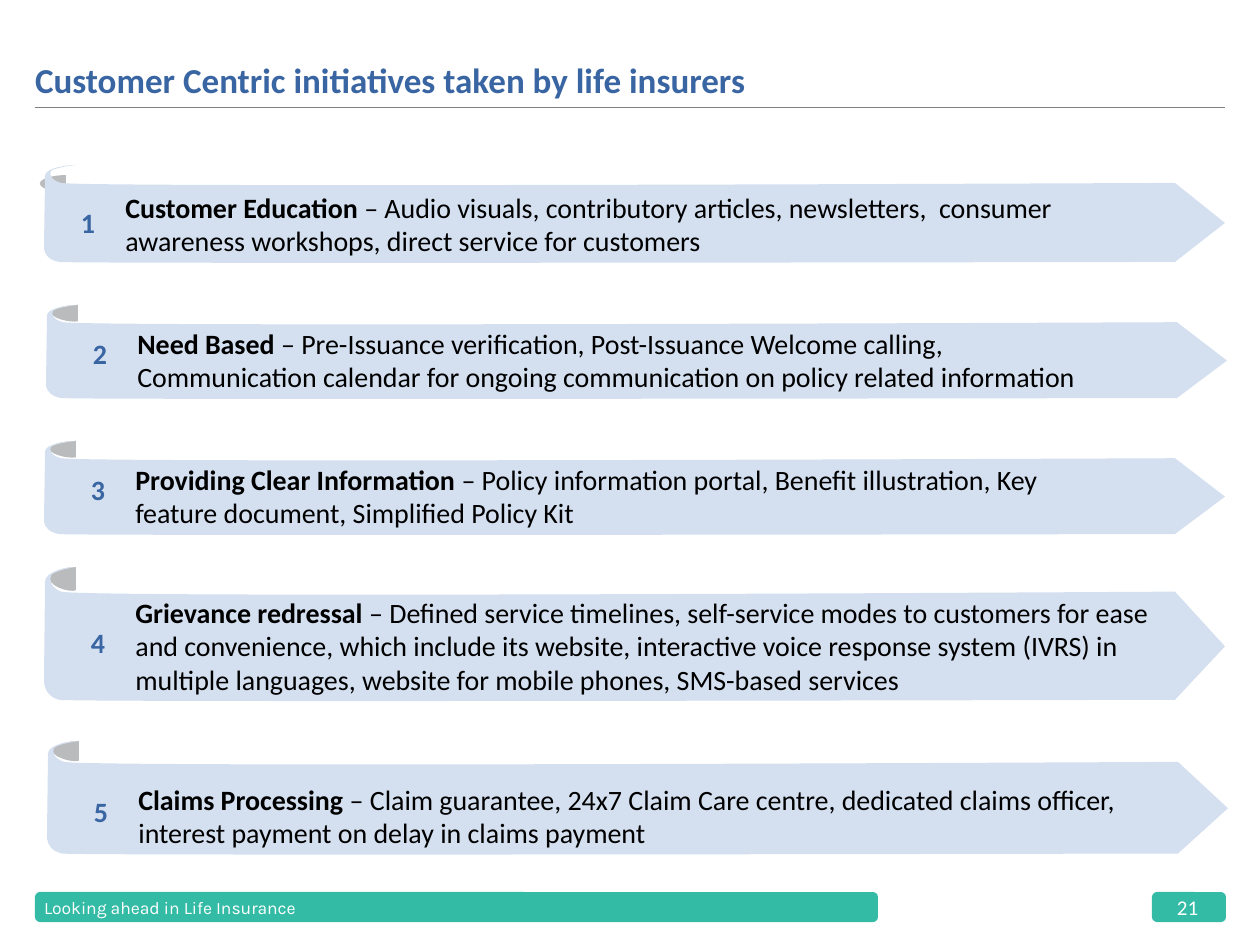
from lxml import etree
from pptx import Presentation
from pptx import util as u
from pptx.dml.color import RGBColor
from pptx.enum import shapes, text
from pptx.oxml.ns import qn

PX = u.Inches(1) / 126

BLUE = RGBColor(0x39, 0x65, 0xA2)
PALE_BLUE = RGBColor(0xD4, 0xE0, 0xF0)
CURL_GREY = RGBColor(0xBA, 0xBB, 0xBC)
RULE_GREY = RGBColor(0x80, 0x80, 0x80)
GREEN = RGBColor(0x33, 0xBB, 0xA6)
BLACK = RGBColor(0, 0, 0)
WHITE = RGBColor(255, 255, 255)

# Outlines: x in px, y as a share of the ribbon height.
# Two numbers draw a line to a point, six draw a cubic curve.
RIBBON = [
    (1181, .58), (1131, .97, 1131, .97, 1131, .97), (1131, .97, 27, .99, 15, .97),
    (5, .95, 1, .9, 0, .84), (0, .78, 1, .19, 1, .11), (1, .03, 23, 0, 32, 0),
    (24, .01, 11, .03, 7, .06), (5, .1, 7, .15, 17, .18),
    (40, .23, 1131, .18, 1131, .18),
]
CURL = [(32, 0), (32, 0, 14, 0, 7, .06), (0, .13, 25, .19, 32, .17)]

# left, top, height, number centre, text width, content shift, curl drop, heading, details
INITIATIVES = [
    (44, 165, 100, 57, 1010, -10, 10, "Customer Education ",
     "– Audio visuals, contributory articles, newsletters,  consumer awareness "
     "workshops, direct service for customers"),
    (46, 305, 96, 48, 1010, 0, 0, "Need Based ",
     "– Pre-Issuance verification, Post-Issuance Welcome calling, Communication "
     "calendar for ongoing communication on policy related information"),
    (44, 441, 96, 48, 1010, 0, 0, "Providing Clear Information ",
     "– Policy information portal, Benefit illustration, Key feature document, "
     "Simplified Policy Kit"),
    (44, 567, 137, 75, 1053, 0, 0, "Grievance redressal ",
     "– Defined service timelines, self-service modes to customers for ease and "
     "convenience, which include its website, interactive voice response system "
     "(IVRS) in multiple languages, website for mobile phones, SMS-based services"),
    (47, 741, 116, 70, 1010, 0, 0, "Claims Processing ",
     "– Claim guarantee, 24x7 Claim Care centre, dedicated claims officer, "
     "interest payment on delay in claims payment"),
]


def box(*lengths):
    return [round(length * PX) for length in lengths]


def paint(shape, color):
    shape.shadow.inherit = False
    shape.fill.solid()
    shape.fill.fore_color.rgb = color
    shape.line.fill.background()


def add_run(paragraph, words, size, color, bold=False, name="Calibri"):
    run = paragraph.add_run()
    run.text = words
    run.font.size = u.Pt(size)
    run.font.name = name
    run.font.bold = bold
    run.font.color.rgb = color


def clear_insets(frame):
    frame.margin_left = frame.margin_right = 0
    frame.margin_top = frame.margin_bottom = 0


def add_label(parent, area, wrap=False):
    """Add an inset-free, vertically centred text box and return its paragraph."""
    frame = parent.add_textbox(*box(*area)).text_frame
    clear_insets(frame)
    frame.word_wrap = wrap
    frame.vertical_anchor = text.MSO_ANCHOR.MIDDLE
    return frame.paragraphs[0]


def add_outline(parent, outline, left, top, height, color):
    """Build a freeform of the outline's extent, then draw its curves as cubics."""
    width = max(max(segment[::2]) for segment in outline)
    depth = max(max(segment[1::2]) for segment in outline) * height
    right, bottom = box(left + width, top + depth)
    start_x, start_y = box(left, top)
    builder = parent.build_freeform(start_x, start_y, scale=1.0)
    builder.add_line_segments([(right, start_y), (right, bottom), (start_x, bottom)])
    shape = builder.convert_to_shape()
    paint(shape, color)

    path = next(shape._element.iter(qn("a:path")))
    for child in list(path):
        path.remove(child)
    for index, segment in enumerate(outline):
        kind = "cubicBezTo" if len(segment) == 6 else "lnTo" if index else "moveTo"
        command = etree.SubElement(path, qn("a:" + kind))
        for x, y in zip(segment[::2], segment[1::2]):
            point_x, point_y = box(x, y * height)
            etree.SubElement(command, qn("a:pt"), x=str(point_x), y=str(point_y))
    etree.SubElement(path, qn("a:close"))


def add_initiative(slide, number, left, top, height, centre, text_width,
                   shift, curl_drop, heading, details):
    group = slide.shapes.add_group_shape().shapes
    add_outline(group, CURL, left + shift, top + curl_drop, height, CURL_GREY)
    add_outline(group, RIBBON, left, top, height, PALE_BLUE)

    paragraph = add_label(group, (left - 12 + shift, top + centre - 31, 132, 63), wrap=True)
    paragraph.alignment = text.PP_ALIGN.CENTER
    add_run(paragraph, str(number), 16, BLUE, bold=True)

    text_height = 115 if height > 120 else 81
    frame = group.add_textbox(*box(left + 79 + shift, top + height - text_height,
                                   text_width, text_height)).text_frame
    frame.word_wrap = True
    add_run(frame.paragraphs[0], heading, 16, BLACK, bold=True)
    add_run(frame.paragraphs[0], details, 16, BLACK)


def add_header(slide, left, top, width, height):
    title = slide.shapes.title
    title.left, title.top, title.width, title.height = box(left, top, width, height)
    frame = title.text_frame
    clear_insets(frame)
    frame.word_wrap = True
    frame.vertical_anchor = text.MSO_ANCHOR.BOTTOM
    frame.paragraphs[0].alignment = text.PP_ALIGN.LEFT
    add_run(frame.paragraphs[0], "Customer Centric initiatives taken by life insurers",
            20, BLUE, bold=True)

    rule_top = top + height + 6
    rule = slide.shapes.add_connector(shapes.MSO_CONNECTOR.STRAIGHT,
                                      *box(left, rule_top, left + width, rule_top))
    rule.line.color.rgb = RULE_GREY
    rule.line.width = u.Pt(0.5)
    etree.SubElement(rule._element.spPr, qn("a:effectLst"))


def add_footer(slide, left, top, width, height):
    page_width = 74
    bars = slide.shapes.add_group_shape().shapes
    for bar_left, bar_width in ((left, 843), (left + width - page_width, page_width)):
        bar = bars.add_shape(shapes.MSO_SHAPE.ROUNDED_RECTANGLE,
                             *box(bar_left, top, bar_width, height))
        paint(bar, GREEN)
    paragraph = add_label(slide.shapes, (left + 9, top + 3, 397, 25))
    add_run(paragraph, "Looking ahead in Life Insurance", 10, WHITE, name="Karla")
    paragraph = add_label(slide.shapes, (left + width - 49, top + 3, 25, 25))
    add_run(paragraph, "21", 12, WHITE)


def main():
    presentation = Presentation()
    presentation.slide_width, presentation.slide_height = u.Inches(10), u.Inches(7.5)
    slide = presentation.slides.add_slide(presentation.slide_layouts[5])
    add_header(slide, 35, 12, 1190, 89)
    for number, initiative in enumerate(INITIATIVES, start=1):
        add_initiative(slide, number, *initiative)
    add_footer(slide, 35, 892, 1191, 30)
    presentation.save("out.pptx")


if __name__ == "__main__":
    main()
